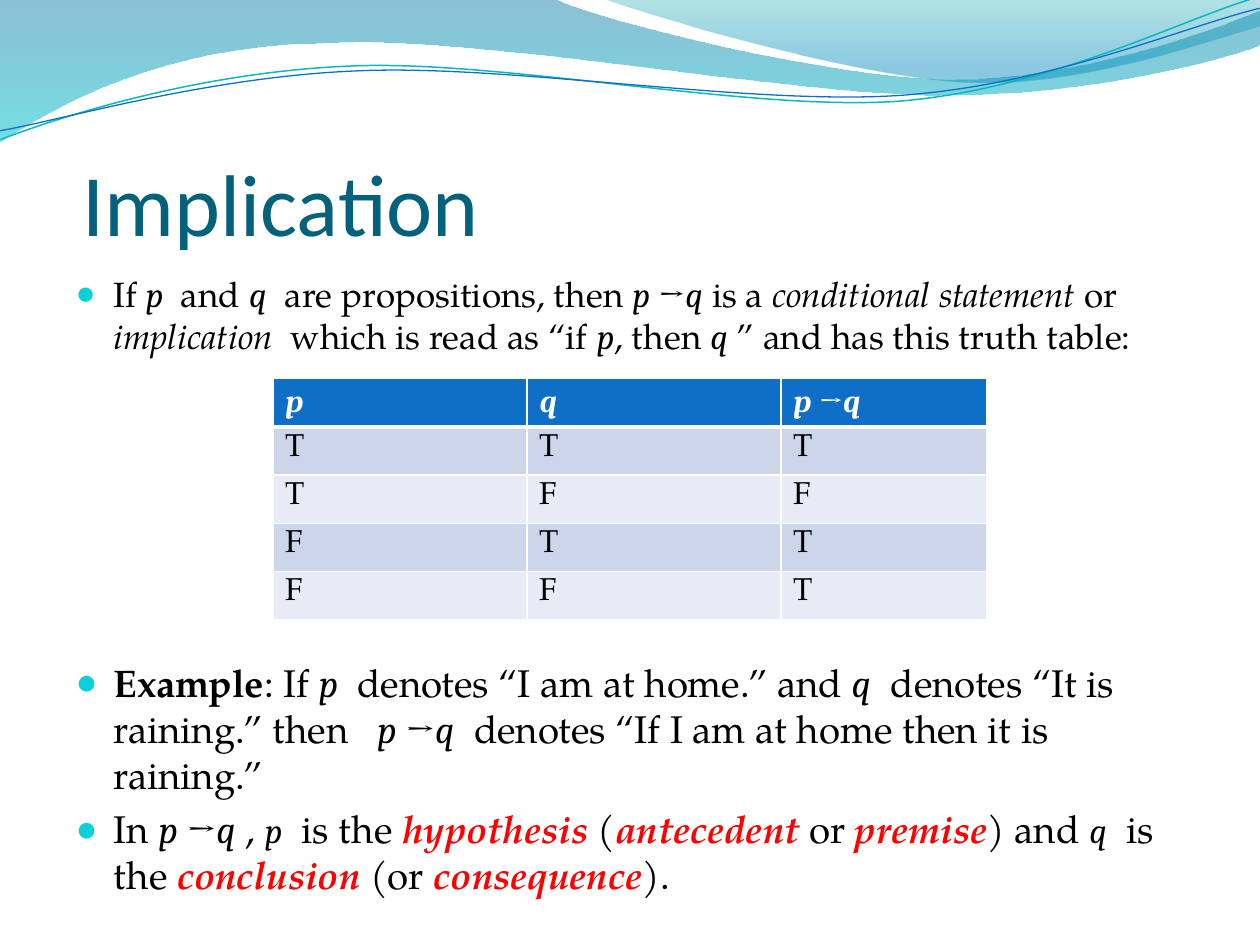
from lxml.etree import SubElement
from pptx import Presentation
from pptx.dml.color import RGBColor
from pptx.enum.text import MSO_ANCHOR, MSO_AUTO_SIZE, PP_ALIGN
from pptx.oxml.ns import qn
from pptx.util import Emu, Pt

SCALE = 914400 / 126
SERIF, MATH = "TeX Gyre Pagella", "Cambria"
PLAIN = {"name": SERIF, "bold": False, "italic": False, "color": "000000"}
STYLES = {
    "plain": PLAIN,
    "bold": PLAIN | {"bold": True},
    "emphasis": PLAIN | {"italic": True},
    "term": PLAIN | {"bold": True, "italic": True, "color": "FF0000"},
    "variable": PLAIN | {"name": MATH, "italic": True},
    "small variable": PLAIN | {"name": MATH, "italic": True, "size": 20},
    "arrow": PLAIN | {"name": MATH},
}
P, Q = ("p", "variable"), ("q", "variable")
SMALL_P, SMALL_Q = ("p", "small variable"), ("q", "small variable")
IMPLIES = [("p ", "variable"), ("→", "arrow"), Q]
BULLETS = [
    (20, 0, [
        ("If ", "plain"), P, ("  and ", "plain"), Q,
        ("  are propositions, then ", "plain"), *IMPLIES, (" is a ", "plain"),
        ("conditional statement ", "emphasis"), ("or ", "plain"),
        ("implication ", "emphasis"), (" which is read as “if ", "plain"), P,
        (", then ", "plain"), Q, (" ” and has this truth table:", "plain")]),
    (22, 173, [
        ("Example", "bold"), (": If ", "plain"), P,
        ("  denotes “I am at home.” and ", "plain"), Q,
        ("  denotes “It is raining.” then   ", "plain"), *IMPLIES,
        ("  denotes “If I am at home then it is raining.”", "plain")]),
    (22, 4.4, [
        ("In ", "plain"), *IMPLIES, (" , ", "plain"), SMALL_P,
        ("  is the ", "plain"), ("hypothesis", "term"), (" (", "plain"),
        ("antecedent", "term"), (" or ", "plain"), ("premise", "term"),
        (") and ", "plain"), SMALL_Q, ("  is the ", "plain"),
        ("conclusion", "term"), (" (or ", "plain"), ("consequence", "term"),
        (").", "plain")]),
]
TRUTH_TABLE = [[[P], [Q], IMPLIES]] + [
    [[(value, "plain")] for value in row] for row in ("TTT", "TFF", "FTT", "FFT")]
BANDS = [
    ([(0, 0), (554, -1), (600, 21, 837, 79, 955, 79), (1075, 79, 1207, 33, 1260, 11),
      (1261, 45), (1239, 55, 1096, 96, 940, 95), (784, 95, 481, 35, 324, 43),
      (163, 45, 58, 105, -1, 142)],
     [(0, "0074A1", 45), (1, "00C6CF", 55)]),
    ([(604, -1), (641, 14, 859, 78, 969, 82), (1079, 87, 1211, 40, 1260, 26), (1260, 0)],
     [(0, "00A1A9", 30), (0.8, "008BBF", 45)]),
]
WAVES = [
    ([(-2, 110), (58, 90, 199, 52, 350, 53), (499, 53, 745, 117, 896, 114),
      (1049, 109, 1184, 45, 1260, 27)], "0AB8BF", 0.85),
    ([(-2, 101), (57, 94, 207, 57, 357, 58), (508, 58, 750, 112, 902, 108),
      (1052, 104, 1188, 52, 1262, 38)], "0F6FC6", 0.75),
]


def px(length):
    """Turn pixels into EMU."""
    return Emu(round(length * SCALE))


def rgb(value):
    """Turn a hex string into a colour."""
    return RGBColor.from_string(value)


def set_attributes(target, values):
    """Set each attribute named in a dict."""
    for name, value in values.items():
        setattr(target, name, value)


def place(shape, left, top, width, height):
    """Move and size a shape in pixels."""
    set_attributes(shape, {"left": px(left), "top": px(top),
                           "width": px(width), "height": px(height)})


def add_runs(paragraph, runs, size, **changes):
    """Fill a paragraph with styled runs."""
    for text, style in runs:
        values = {"size": size} | STYLES[style] | changes
        run = paragraph.add_run()
        run.text = text
        run.font.color.rgb = rgb(values.pop("color"))
        set_attributes(run.font, values | {"size": Pt(values["size"])})


def add_outline(shapes, steps, close):
    """Draw an outline whose six-number steps are Bézier curves."""
    anchors = [(px(step[-2]), px(step[-1])) for step in steps]
    builder = shapes.build_freeform(*anchors[0])
    builder.add_line_segments(anchors[1:], close=close)
    shape = builder.convert_to_shape()
    shape.shadow.inherit = False
    left, top = (min(values) for values in zip(*anchors))
    segments = list(shape._element.iter(qn("a:lnTo")))
    for segment, step in zip(segments, steps[1:]):
        if len(step) == 6:
            segment.clear()
            segment.tag = qn("a:cubicBezTo")
            for x, y in zip(step[::2], step[1::2]):
                SubElement(segment, qn("a:pt"), x=str(px(x) - left), y=str(px(y) - top))
    return shape


def add_band(shapes, steps, stops):
    """Draw a translucent band with a downward gradient."""
    shape = add_outline(shapes, steps, True)
    shape.line.fill.background()
    shape.fill.gradient()
    shape.fill.gradient_angle = 270
    for stop, (position, color, _) in zip(shape.fill.gradient_stops, stops):
        stop.position = position
        stop.color.rgb = rgb(color)
    colors = shape._element.spPr.iter(qn("a:srgbClr"))
    for element, (_, _, opacity) in zip(colors, stops):
        SubElement(element, qn("a:alpha"), val=str(opacity * 1000))


def add_wave(shapes, steps, color, width):
    """Draw a thin, slightly turned open curve."""
    shape = add_outline(shapes, steps, False)
    shape.fill.background()
    shape.line.color.rgb = rgb(color)
    set_attributes(shape, {"rotation": 357.3})
    shape.line.width = Pt(width)


def fill_title(shape):
    """Write the title."""
    place(shape, 63, 96, 1134, 158)
    set_attributes(shape.text_frame, {
        "vertical_anchor": MSO_ANCHOR.BOTTOM, "auto_size": MSO_AUTO_SIZE.NONE,
        "margin_left": 0, "margin_right": 0, "margin_bottom": 0})
    paragraph = shape.text_frame.paragraphs[0]
    paragraph.alignment = PP_ALIGN.LEFT
    add_runs(paragraph, [(" Implication", "plain")], 50, name="Calibri", color="04617B")


def add_bullet(paragraph):
    """Give a paragraph a coloured bullet and a hanging indent."""
    properties = paragraph._p.get_or_add_pPr()
    properties.set("marL", str(px(38)))
    properties.set("indent", str(px(-38)))
    color = SubElement(properties, qn("a:buClr"))
    SubElement(color, qn("a:srgbClr"), val="0BD0D9")
    SubElement(properties, qn("a:buSzPct"), val="95000")
    SubElement(properties, qn("a:buChar"), char="●")


def fill_body(shape):
    """Write the bullet list."""
    place(shape, 63, 266, 1134, 605)
    frame = shape.text_frame
    frame.auto_size = MSO_AUTO_SIZE.NONE
    for index, (size, space, runs) in enumerate(BULLETS):
        paragraph = frame.add_paragraph() if index else frame.paragraphs[0]
        paragraph.space_before = Pt(space)
        add_bullet(paragraph)
        add_runs(paragraph, runs, size)


def add_bottom_border(cell):
    """Draw a thick white border under a cell."""
    properties = cell._tc.get_or_add_tcPr()
    border = SubElement(properties, qn("a:lnB"), w=str(Pt(3)))
    properties.insert(0, border)
    fill = SubElement(border, qn("a:solidFill"))
    SubElement(fill, qn("a:srgbClr"), val="FFFFFF")


def add_truth_table(slide):
    """Add the truth table of the implication."""
    table = slide.shapes.add_table(5, 3, px(273), px(378), px(714), px(241)).table
    for column, width in zip(table.columns, (254, 254, 206)):
        column.width = px(width)
    for row, contents in enumerate(TRUTH_TABLE):
        header = row == 0
        fill = "0F6FC6" if header else ("E7EBF5", "CCD5EA")[row % 2]
        changes = {"bold": True, "color": "FFFFFF"} if header else {}
        for column, runs in enumerate(contents):
            cell = table.cell(row, column)
            cell.fill.solid()
            cell.fill.fore_color.rgb = rgb(fill)
            if header:
                add_bottom_border(cell)
            add_runs(cell.text_frame.paragraphs[0], runs, 18, **changes)


def main():
    """Build and save the slide."""
    presentation = Presentation()
    set_attributes(presentation, {"slide_width": px(1260), "slide_height": px(945)})
    slide = presentation.slides.add_slide(presentation.slide_layouts[1])
    title, body = slide.placeholders
    for band in BANDS:
        add_band(slide.shapes, *band)
    group = slide.shapes.add_group_shape()
    for wave in WAVES:
        add_wave(group.shapes, *wave)
    for placeholder, fill in ((title, fill_title), (body, fill_body)):
        slide.shapes._spTree.append(placeholder._element)
        fill(placeholder)
    add_truth_table(slide)
    presentation.save("out.pptx")


if __name__ == "__main__":
    main()
